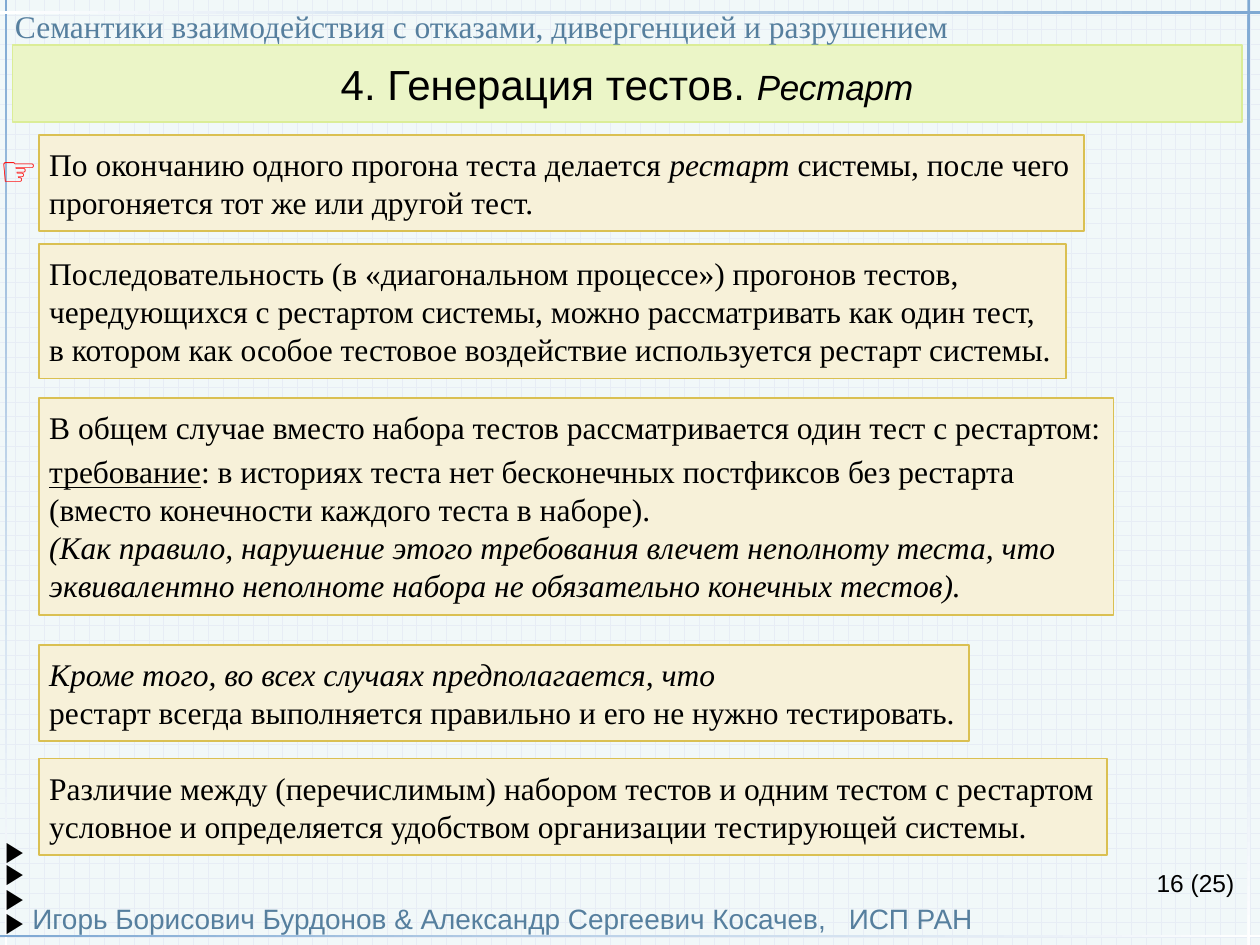
from typing import NamedTuple

from lxml.etree import SubElement
from pptx import Presentation
from pptx.dml.color import RGBColor
from pptx.enum.dml import MSO_PATTERN
from pptx.enum.shapes import MSO_SHAPE
from pptx.enum.text import MSO_ANCHOR, PP_ALIGN
from pptx.oxml.ns import qn
from pptx.util import Pt

COLORS = {
    "text": "000000", "accent": "567F9E", "hand": "FF0000",
    "rule": "7FA9D3", "fade": "FFFFFF", "grid": "E7EDF5", "paper": "F1F8F9",
    "title": "EBF5C7", "title_line": "DBED97", "box": "F7F1D9", "box_line": "DAC052",
}
SERIF, SANS = "Times New Roman", "Arial"
BOX_LEFT, BOX_PAD, LINE_H, PARA_GAP = 22.3, 5.8, 21.75, 3.6


class Run(NamedTuple):
    text: str
    italic: bool = False
    underline: bool = False


class Box(NamedTuple):
    top: float
    width: float
    lines: list[list[Run]]
    spaced: tuple[int, ...] = ()  # lines with space before


class Label(NamedTuple):
    text: str
    left: float
    top: float
    width: float
    height: float
    size: float
    font: str = SANS
    color: str = "text"
    bold: bool = False
    align: PP_ALIGN = PP_ALIGN.LEFT
    tab: float = 0


class Rule(NamedTuple):
    left: float
    top: float
    width: float
    height: float
    angle: float


def rgb(name: str) -> RGBColor:
    return RGBColor.from_string(COLORS[name])


def add_run(p, text: str, size: float, font: str, color: str = "text"):
    r = p.add_run()
    r.text = text
    r.font.size, r.font.name = Pt(size), font
    r.font.color.rgb = rgb(color)
    return r


def set_margins(tf, x: float, y: float) -> None:
    tf.margin_left = tf.margin_right = Pt(x)
    tf.margin_top = tf.margin_bottom = Pt(y)


def place(sp, left: float, top: float, width: float, height: float) -> None:
    sp.left, sp.top, sp.width, sp.height = Pt(left), Pt(top), Pt(width), Pt(height)


def paint(sp, fill: str, line: str, weight: float) -> None:
    sp.fill.solid()
    sp.fill.fore_color.rgb = rgb(fill)
    sp.line.color.rgb = rgb(line)
    sp.line.width = Pt(weight)


def add_rect(s, left: float, top: float, width: float, height: float):
    sp = s.shapes.add_shape(MSO_SHAPE.RECTANGLE, Pt(left), Pt(top), Pt(width), Pt(height))
    sp.shadow.inherit = False
    return sp


def draw_rule(s, rule: Rule) -> None:
    sp = add_rect(s, rule.left, rule.top, rule.width, rule.height)
    sp.line.fill.background()
    sp.fill.gradient()
    sp.fill.gradient_angle = rule.angle
    for stop, position, color in zip(sp.fill.gradient_stops, (0, 1), ("rule", "fade")):
        stop.position = position
        stop.color.rgb = rgb(color)


def draw_label(s, label: Label) -> None:
    sp = s.shapes.add_textbox(Pt(label.left), Pt(label.top), Pt(label.width), Pt(label.height))
    tf = sp.text_frame
    tf.word_wrap = True
    set_margins(tf, 0, 0)
    p = tf.paragraphs[0]
    p.alignment = label.align
    if label.tab:
        tabs = SubElement(p._p.get_or_add_pPr(), qn("a:tabLst"))
        SubElement(tabs, qn("a:tab"), pos=str(Pt(label.tab)), algn="l")
    add_run(p, label.text, label.size, label.font, label.color).font.bold = label.bold


def draw_box(s, box: Box) -> None:
    height = 2 * BOX_PAD + LINE_H * len(box.lines) + PARA_GAP * len(box.spaced)
    sp = add_rect(s, BOX_LEFT, box.top, box.width, height)
    paint(sp, "box", "box_line", 1)
    tf = sp.text_frame
    tf.word_wrap = False
    tf.vertical_anchor = MSO_ANCHOR.TOP
    set_margins(tf, BOX_PAD, BOX_PAD)
    for i, line in enumerate(box.lines):
        p = tf.add_paragraph() if i else tf.paragraphs[0]
        p.alignment = PP_ALIGN.LEFT
        if i in box.spaced:
            p.space_before = Pt(PARA_GAP)
        for run in line:
            r = add_run(p, run.text, 18, SERIF)
            r.font.italic, r.font.underline = run.italic, run.underline


def draw_title(s) -> None:
    sp = s.shapes.title
    place(sp, 7, 25.7, 702.7, 44)
    paint(sp, "title", "title_line", 0.75)
    tf = sp.text_frame
    tf.word_wrap = True
    tf.vertical_anchor = MSO_ANCHOR.MIDDLE
    set_margins(tf, 0, 7.2)
    p = tf.paragraphs[0]
    p.alignment = PP_ALIGN.CENTER
    add_run(p, "4. Генерация тестов. ", 24, SANS)
    add_run(p, "Рестарт", 20, SANS).font.italic = True


RULES = [
    Rule(2.9, 0, 1.4, 540, 270),
    Rule(0, 6.5, 720, 1.4, 180),
    Rule(0, 534.2, 720, 1.4, 0),
    Rule(712.8, 0, 1.4, 540, 270),
]
LABELS = [
    Label("Семантики взаимодействия с отказами, дивергенцией и разрушением",
          8.6, 4, 700, 21.6, 18, SERIF, "accent"),
    Label("Игорь Борисович Бурдонов & Александр Сергеевич Косачев,\tИСП РАН",
          18.5, 515, 600, 19, 16, SANS, "accent", tab=466.5),
    Label("16", 640, 496, 36.5, 17.3, 14, align=PP_ALIGN.RIGHT),
    Label("(25)", 680.4, 496, 30, 17.3, 14),
    Label("☞", 0, 82.8, 22, 28.8, 24, color="hand", bold=True),
] + [Label("▶", 2.9, top, 16, 19.4, 16, SERIF, bold=True)
     for top in (476.6, 488.9, 503.3, 517)]
BOXES = [
    Box(77, 597, [
        [Run("По окончанию одного прогона теста делается "), Run("рестарт", italic=True),
         Run(" системы, после чего")],
        [Run("прогоняется тот же или другой тест.")],
    ]),
    Box(139.5, 587, [
        [Run("Последовательность (в «диагональном процессе») прогонов тестов,")],
        [Run("чередующихся с рестартом системы, можно рассматривать как один тест,")],
        [Run("в котором как особое тестовое воздействие используется рестарт системы.")],
    ]),
    Box(227.5, 614, [
        [Run("В общем случае вместо набора тестов рассматривается один тест с рестартом:")],
        [Run("требование", underline=True),
         Run(": в историях теста нет бесконечных постфиксов без рестарта")],
        [Run("(вместо конечности каждого теста в наборе).")],
        [Run("(Как правило, нарушение этого требования влечет неполноту теста, что", italic=True)],
        [Run("эквивалентно неполноте набора не обязательно конечных тестов).", italic=True)],
    ], spaced=(1,)),
    Box(368.6, 531.5, [
        [Run("Кроме того, во всех случаях предполагается, что", italic=True)],
        [Run("рестарт всегда выполняется правильно и его не нужно тестировать.")],
    ]),
    Box(433.5, 610.5, [
        [Run("Различие между (перечислимым) набором тестов и одним тестом с рестартом")],
        [Run("условное и определяется удобством организации тестирующей системы.")],
    ]),
]


def main() -> None:
    prs = Presentation()
    prs.slide_width, prs.slide_height = Pt(720), Pt(540)
    s = prs.slides.add_slide(prs.slide_layouts[5])

    # Background pattern
    fill = s.background.fill
    fill.patterned()
    fill.pattern = MSO_PATTERN.HORIZONTAL_BRICK
    fill.fore_color.rgb, fill.back_color.rgb = rgb("grid"), rgb("paper")

    # Frame, title, labels and text boxes
    for rule in RULES:
        draw_rule(s, rule)
    draw_title(s)
    for label in LABELS:
        draw_label(s, label)
    for box in BOXES:
        draw_box(s, box)
    prs.save("out.pptx")


if __name__ == "__main__":
    main()
